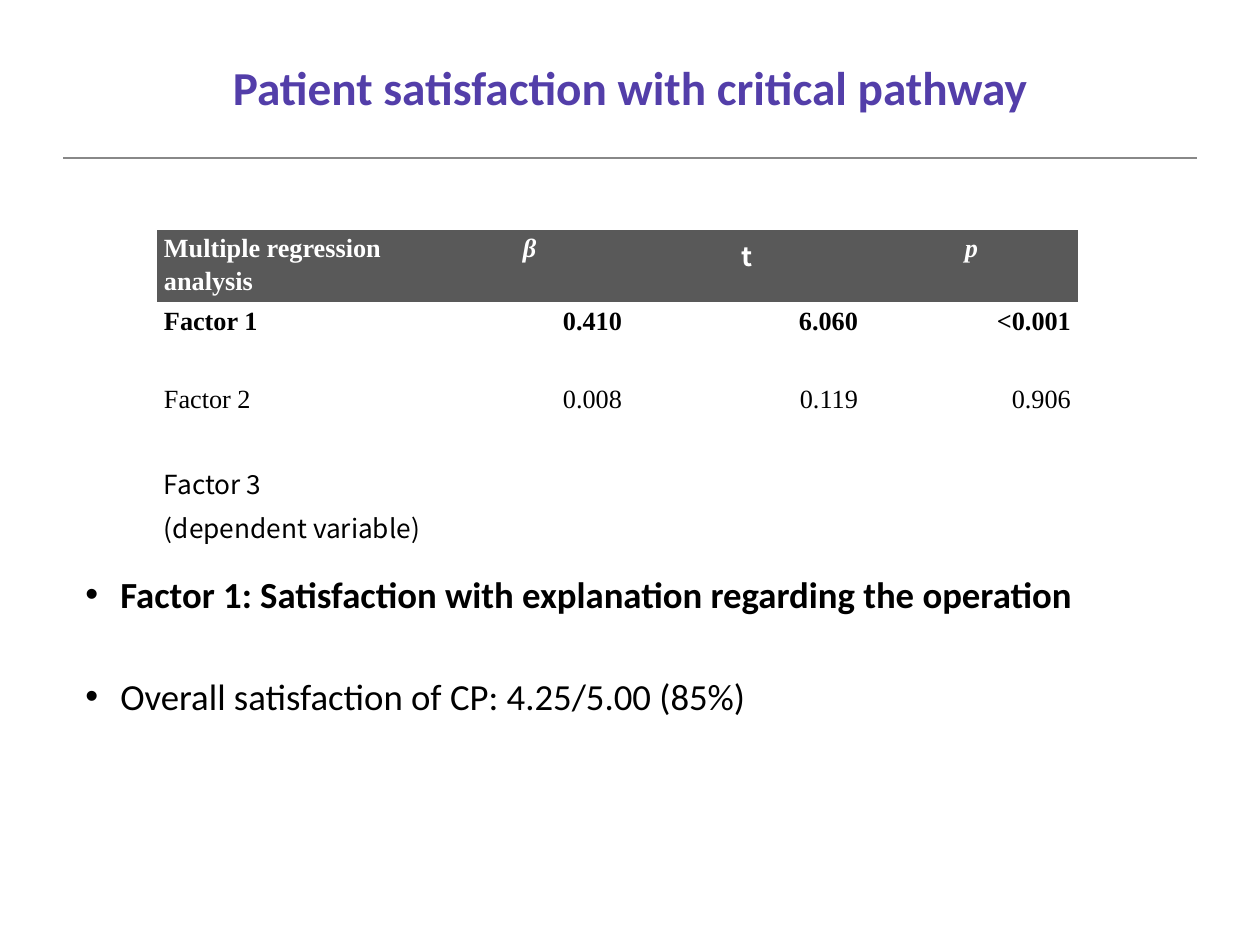
import pptx
import pptx.dml.color
import pptx.enum.shapes
import pptx.enum.text
import pptx.oxml.ns
import pptx.util
from lxml import etree

RGBColor = pptx.dml.color.RGBColor
PURPLE = RGBColor(0x53, 0x3E, 0xA9)
GREY = RGBColor(0x88, 0x88, 0x88)
HEADER_GREY = RGBColor(0x59, 0x59, 0x59)
WHITE = RGBColor(0xFF, 0xFF, 0xFF)
BLACK = RGBColor(0x00, 0x00, 0x00)
SERIF = "Times New Roman"
SANS = "Noto Sans CJK KR"
NO_STYLE = "{2D5ABB26-0587-4C30-8999-92F81FD0307C}"
ALIGN = pptx.enum.text.PP_ALIGN
qn = pptx.oxml.ns.qn


def px(length):
    return pptx.util.Emu(round(length * 914400 / 126))


def format_text(para, font, size, color, bold=False, italic=False):
    for span in para.runs:
        span.font.name = font
        span.font.size = pptx.util.Pt(size)
        span.font.color.rgb = color
        span.font.bold = bold
        span.font.italic = italic


deck = pptx.Presentation()
deck.slide_width, deck.slide_height = px(1260), px(945)
page = deck.slides.add_slide(deck.slide_layouts[6])

# Rule under the title
rule = page.shapes.add_connector(
    pptx.enum.shapes.MSO_CONNECTOR.STRAIGHT, px(63), px(158), px(1197), px(158))
rule.line.color.rgb = GREY
rule.line.width = pptx.util.Pt(1)
etree.SubElement(rule._element.spPr, qn("a:effectLst"))

# Title
title = page.shapes.add_textbox(px(63), px(38), px(1134), px(97)).text_frame
title.word_wrap = True
title.vertical_anchor = pptx.enum.text.MSO_ANCHOR.MIDDLE
title.text = "Patient satisfaction with critical pathway"
title.paragraphs[0].alignment = ALIGN.CENTER
format_text(title.paragraphs[0], "Calibri", 27, PURPLE, bold=True)

# Findings below the table
findings = [
    ("Factor 1: Satisfaction with explanation regarding the operation", True),
    ("Overall satisfaction of CP: 4.25/5.00 (85%)", False),
]
body = page.shapes.add_textbox(px(73), px(566), px(1134), px(349)).text_frame
body.word_wrap = True
body.text = "\n".join(text for text, bold in findings)
for para, (text, bold) in zip(body.paragraphs, findings):
    format_text(para, "Calibri", 21, BLACK, bold)
    properties = para._p.get_or_add_pPr()
    properties.set("marL", str(px(35)))
    properties.set("indent", str(px(-35)))
    etree.SubElement(properties, qn("a:buFont"), typeface="Arial")
    etree.SubElement(properties, qn("a:buChar"), char="•")
body.paragraphs[1].space_before = pptx.util.Pt(33)

# Regression table
rows = [
    ["Multiple regression \nanalysis", "β", "t", "p"],
    ["Factor 1", "0.410", "6.060", "<0.001"],
    ["Factor 2", "0.008", "0.119", "0.906"],
    ["Factor 3\n(dependent variable)", "", "", ""],
]
column_widths = [273, 199, 236, 213]
row_heights = [72, 78, 78, 72]
table = page.shapes.add_table(
    len(rows), len(column_widths), px(157), px(230),
    px(sum(column_widths)), px(sum(row_heights))).table
table.first_row = table.horz_banding = False
table._tbl.tblPr.find(qn("a:tableStyleId")).text = NO_STYLE
for column, width in zip(table.columns, column_widths):
    column.width = px(width)
for row, height in zip(table.rows, row_heights):
    row.height = px(height)

for r, texts in enumerate(rows):
    for c, text in enumerate(texts):
        cell = table.cell(r, c)
        cell.fill.solid()
        cell.fill.fore_color.rgb = HEADER_GREY if r == 0 else WHITE
        cell.margin_left = cell.margin_right = px(7)
        cell.margin_top = cell.margin_bottom = 0
        cell.text_frame.text = text
        for para in cell.text_frame.paragraphs:
            para.line_spacing = 1.15
            if r == 0:
                para.alignment = ALIGN.JUSTIFY if c == 0 else ALIGN.CENTER
            else:
                para.alignment = ALIGN.LEFT if c == 0 else ALIGN.RIGHT
            format_text(para, SANS if text == "t" or r == 3 else SERIF, 15,
                        WHITE if r == 0 else BLACK,
                        bold=r < 2, italic=text in ("β", "p"))

deck.save("out.pptx")
